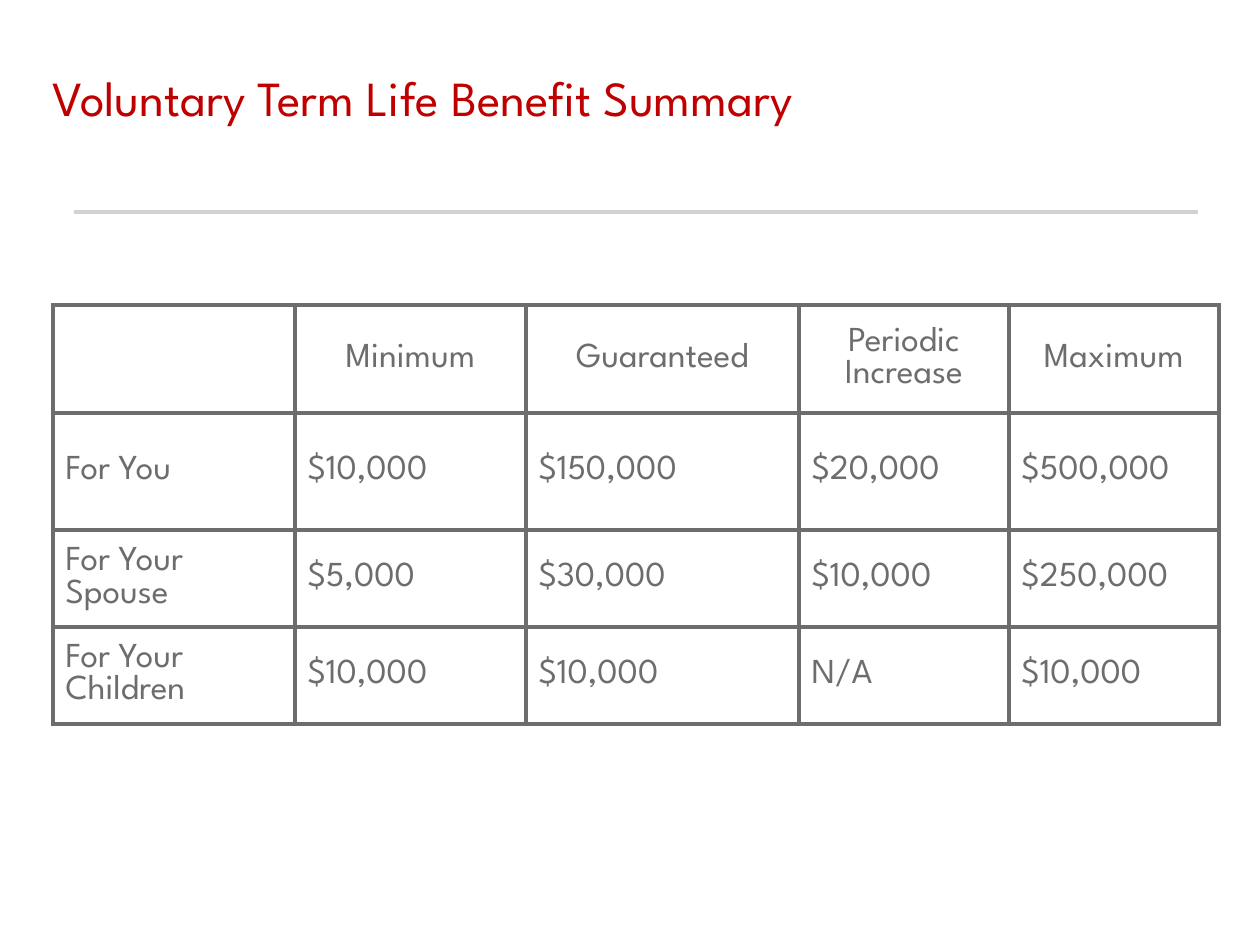
from lxml import etree
from pptx import Presentation
from pptx.dml.color import RGBColor
from pptx.enum.shapes import MSO_CONNECTOR
from pptx.enum.text import MSO_ANCHOR, PP_ALIGN
from pptx.oxml import parse_xml
from pptx.oxml.ns import nsdecls, qn
from pptx.util import Pt

STRAIGHT = MSO_CONNECTOR.STRAIGHT
MIDDLE, BOTTOM = MSO_ANCHOR.MIDDLE, MSO_ANCHOR.BOTTOM
LEFT, CENTER = PP_ALIGN.LEFT, PP_ALIGN.CENTER

THEME = {
    "font": "League Spartan",
    "red": "C00000", "gray": "6D6D70", "white": "FFFFFF",
    "title_size": 28, "cell_size": 20, "stroke": 2.25,
}


def px(n):
    return round(n * 914400 / 126)


def write(paragraph, text, size, color, **paragraph_format):
    for key, value in paragraph_format.items():
        setattr(paragraph, key, value)
    run = paragraph.add_run()
    run.text = text
    for key, value in {"name": THEME["font"], "size": Pt(size), "bold": False}.items():
        setattr(run.font, key, value)
    run.font.color.rgb = RGBColor.from_string(color)


prs = Presentation()
prs.slide_width, prs.slide_height = px(1260), px(945)
slide = prs.slides.add_slide(prs.slide_layouts[6])

# Divider, drawn at 30 % opacity
divider = slide.shapes.add_connector(STRAIGHT, px(74), px(212), px(1198), px(212))
divider.line.width = Pt(THEME["stroke"])
divider.line.color.rgb = RGBColor.from_string(THEME["gray"])
divider_color = divider.line.fill._xPr.find(".//" + qn("a:srgbClr"))
etree.SubElement(divider_color, qn("a:alpha"), val="30000")
etree.SubElement(divider._element.spPr, qn("a:effectLst"))

# Title
title = slide.shapes.add_textbox(px(53), px(38), px(1144), px(88)).text_frame
title_format = {
    "word_wrap": True, "vertical_anchor": BOTTOM,
    "margin_left": 0, "margin_top": 0, "margin_right": 0, "margin_bottom": 0,
}
for key, value in title_format.items():
    setattr(title, key, value)
write(title.paragraphs[0], "Voluntary Term Life Benefit Summary",
      THEME["title_size"], THEME["red"], line_spacing=1.05)

# Benefit table
benefits = [
    ["", "Minimum", "Guaranteed", "Periodic Increase", "Maximum"],
    ["For You", "$10,000", "$150,000", "$20,000", "$500,000"],
    ["For Your Spouse", "$5,000", "$30,000", "$10,000", "$250,000"],
    ["For Your Children", "$10,000", "$10,000", "N/A", "$10,000"],
]
column_widths = [242, 231, 273, 210, 210]
row_heights = [108, 117, 97, 97]
table = slide.shapes.add_table(
    len(row_heights), len(column_widths), px(53), px(305),
    px(sum(column_widths)), px(sum(row_heights))).table
table.first_row = table.horz_banding = False
for column, width in zip(table.columns, column_widths):
    column.width = px(width)
for row, height in zip(table.rows, row_heights):
    row.height = px(height)

for r, values in enumerate(benefits):
    for c, value in enumerate(values):
        cell = table.cell(r, c)
        cell.vertical_anchor = MIDDLE
        if value:
            write(cell.text_frame.paragraphs[0], value, THEME["cell_size"],
                  THEME["gray"], alignment=LEFT if r else CENTER)
        # Borders come before the fill in the cell properties
        properties = cell._tc.get_or_add_tcPr()
        for side in ("lnL", "lnR", "lnT", "lnB"):
            properties.append(parse_xml(
                f'<a:{side} {nsdecls("a")} w="{Pt(THEME["stroke"])}"><a:solidFill>'
                f'<a:srgbClr val="{THEME["gray"]}"/></a:solidFill></a:{side}>'))
        if r:
            cell.fill.background()
        else:
            cell.fill.solid()
            cell.fill.fore_color.rgb = RGBColor.from_string(THEME["white"])

prs.save("out.pptx")
